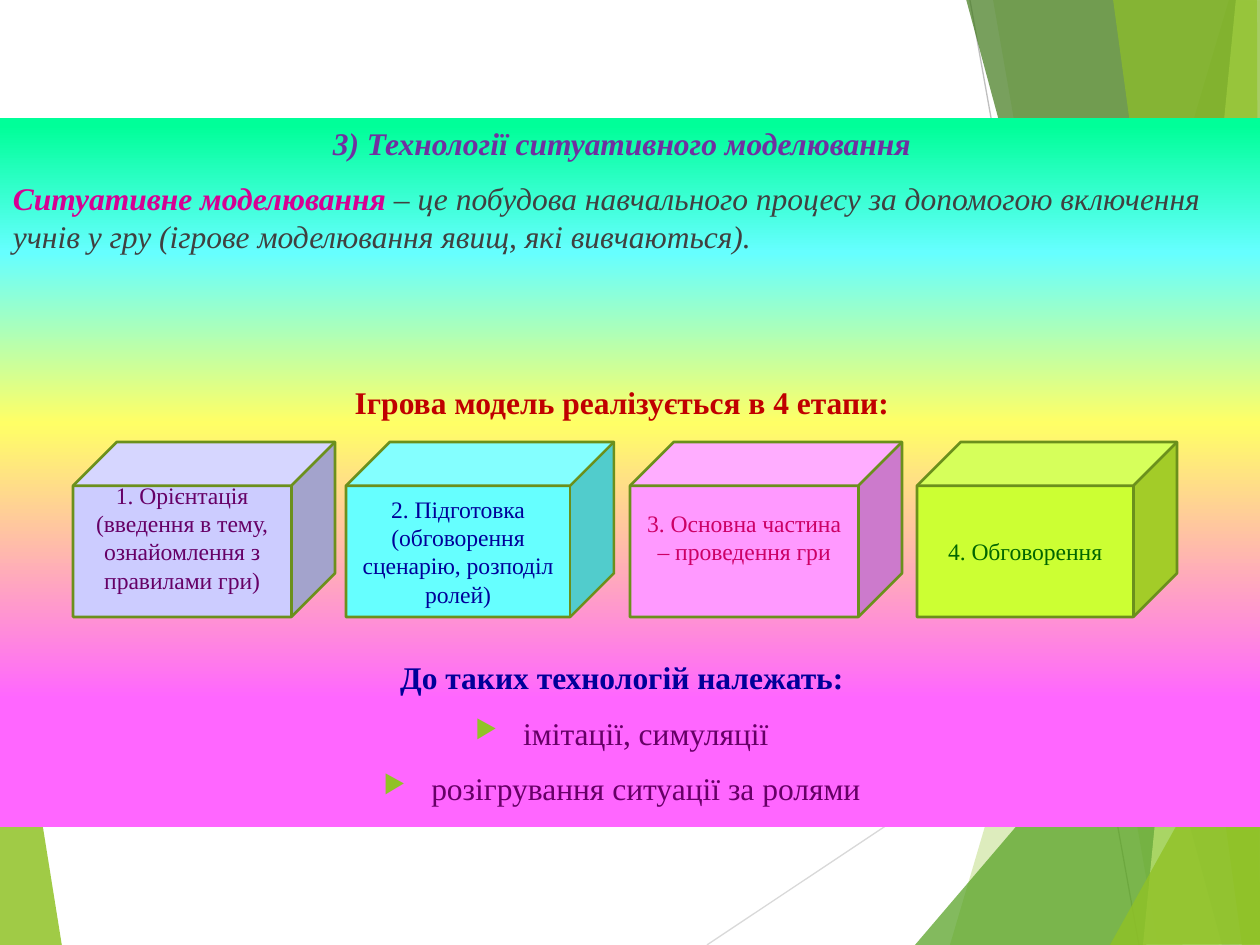
from lxml import etree
from pptx import Presentation
from pptx.dml.color import RGBColor
from pptx.enum.shapes import MSO_CONNECTOR, MSO_SHAPE
from pptx.enum.text import MSO_ANCHOR, PP_ALIGN
from pptx.oxml.ns import qn
from pptx.util import Pt

PX = 914400 // 126
FONT = "Times New Roman"
LINE = MSO_CONNECTOR.STRAIGHT
RECT, CUBE = MSO_SHAPE.RECTANGLE, MSO_SHAPE.CUBE
TOP, MIDDLE = MSO_ANCHOR.TOP, MSO_ANCHOR.MIDDLE
LEFT, CENTER = PP_ALIGN.LEFT, PP_ALIGN.CENTER

COLORS = {
    "lime": "90C226", "green": "54A021", "forest": "3F7819", "pale": "C0E474",
    "silver": "D9D9D9", "gray": "BFBFBF", "edge": "6B901C",
    "violet": "7030A0", "magenta": "D60093", "dark": "404040", "red": "C00000",
    "navy": "000099", "plum": "660066", "rose": "CC0066", "leaf": "006600",
    "lilac": "CCCCFF", "aqua": "66FFFF", "pink": "FF99FF", "neon": "CCFF33",
    "mint": "00FF99", "yellow": "FFFF66", "fuchsia": "FF66FF",
}

# Decor: colour, opacity in percent, corner points
FACETS_LEFT = [("lime", 85, [(-1, 553), (62, 946), (-1, 945)])]
FACETS_RIGHT = [
    ("lime", 30, [(1229, 0), (950, 945), (1262, 946), (1261, 1)]),
    ("lime", 20, [(993, -1), (1158, 945), (1261, 945), (1261, -1)]),
    ("green", 72, [(915, 945), (1260, 541), (1261, 945)]),
    ("forest", 70, [(966, -1), (1222, 945), (1261, 944), (1261, -1)]),
    ("pale", 70, [(1236, -1), (1143, 945), (1261, 945), (1260, -1)]),
    ("lime", 65, [(1113, -1), (1242, 945), (1260, 945), (1257, -1)]),
    ("lime", 80, [(1110, 945), (1261, 674), (1261, 944)]),
]
RAYS = [("silver", (707, 945), (1261, 576)), ("gray", (970, 0), (1139, 945))]

# Gradient from top to bottom: percent, colour
STOPS = [(1, "mint"), (19, "aqua"), (43, "yellow"), (82, "fuchsia")]

# Body: alignment, space before in points, bullet, runs (text, colour, bold, italic)
BODY = [
    (CENTER, 0, False,
     [("3) Технології ситуативного моделювання", "violet", True, True)]),
    (LEFT, 10, False,
     [("Ситуативне моделювання ", "magenta", True, True),
      ("– це побудова навчального процесу за допомогою включення учнів у гру "
       "(ігрове моделювання явищ, які вивчаються).", "dark", False, True)]),
    (CENTER, 73, False,
     [("Ігрова модель реалізується в 4 етапи:", "red", True, False)]),
    (CENTER, 136, False,
     [("До таких технологій належать:", "navy", True, False)]),
    (CENTER, 10, True, [("імітації, симуляції", "plum", False, False)]),
    (CENTER, 10, True, [("розігрування ситуації за ролями", "plum", False, False)]),
]

# Stages: left, width, fill, text colour, extra space below, text
STAGES = [
    (73, 262, "lilac", "plum", 28,
     "1. Орієнтація (введення в тему, ознайомлення з правилами гри)"),
    (346, 268, "aqua", "navy", 0,
     "2. Підготовка (обговорення сценарію, розподіл ролей)"),
    (630, 272, "pink", "rose", 28, "3. Основна частина – проведення гри"),
    (917, 260, "neon", "leaf", 0, "4. Обговорення"),
]


def rgb(name):
    return RGBColor.from_string(COLORS[name])


def paint(shape, name):
    shape.shadow.inherit = False
    shape.fill.solid()
    shape.fill.fore_color.rgb = rgb(name)


def facet(slide, name, alpha, points):
    pen = slide.shapes.build_freeform(*points[0], scale=PX)
    pen.add_line_segments(points[1:], close=True)
    shape = pen.convert_to_shape()
    paint(shape, name)
    shape.line.fill.background()
    color = shape.fill._xPr.find(".//" + qn("a:srgbClr"))
    etree.SubElement(color, qn("a:alpha"), val=str(alpha * 1000))


def ray(slide, name, start, end):
    line = slide.shapes.add_connector(LINE, *(v * PX for v in start + end))
    line.line.color.rgb = rgb(name)
    line.line.width = Pt(0.75)
    etree.SubElement(line._element.spPr, qn("a:effectLst"))


def box(slide, kind, left, top, width, height):
    return slide.shapes.add_shape(kind, *(v * PX for v in (left, top, width, height)))


def blend(shape):
    shape.shadow.inherit = False
    shape.fill.gradient()
    shape.fill.gradient_angle = 270
    stops = shape.fill._xPr.find(".//" + qn("a:gsLst"))
    for old in list(stops):
        stops.remove(old)
    for pos, name in STOPS:
        stop = etree.SubElement(stops, qn("a:gs"), pos=str(pos * 1000))
        etree.SubElement(stop, qn("a:srgbClr"), val=COLORS[name])


def frame(shape, anchor, right, bottom):
    text = shape.text_frame
    text.word_wrap = True
    text.vertical_anchor = anchor
    text.margin_left, text.margin_top = 13 * PX, 6 * PX
    text.margin_right, text.margin_bottom = right * PX, bottom * PX
    return text


def style(run, size, name, bold=False, italic=False):
    font = run.font
    font.name, font.size = FONT, Pt(size)
    font.bold, font.italic = bold, italic
    font.color.rgb = rgb(name)


def bullet(para):
    props = para._p.get_or_add_pPr()
    props.set("marL", str(48 * PX))
    props.set("indent", str(-48 * PX))
    color = etree.SubElement(props, qn("a:buClr"))
    etree.SubElement(color, qn("a:srgbClr"), val=COLORS["lime"])
    etree.SubElement(props, qn("a:buSzPct"), val="80000")
    etree.SubElement(props, qn("a:buChar"), char="▶")


def panel(slide):
    shape = box(slide, RECT, 0, 118, 1260, 709)
    blend(shape)
    shape.line.fill.background()
    text = frame(shape, TOP, 29, 6)
    for i, (align, gap, marked, runs) in enumerate(BODY):
        para = text.add_paragraph() if i else text.paragraphs[0]
        para.alignment = align
        para.space_before = Pt(gap)
        if marked:
            bullet(para)
        for words, *look in runs:
            run = para.add_run()
            run.text = words
            style(run, 18, *look)


def stage(slide, left, width, fill, ink, below, words):
    shape = box(slide, CUBE, left, 442, width, 175)
    paint(shape, fill)
    shape.line.color.rgb = rgb("edge")
    shape.line.width = Pt(1.5)
    text = frame(shape, MIDDLE, 13, 6 + below)
    text.text = words
    para = text.paragraphs[0]
    para.alignment = CENTER
    style(para.runs[0], 13.5, ink)


def main():
    deck = Presentation()
    deck.slide_width, deck.slide_height = 1260 * PX, 945 * PX
    slide = deck.slides.add_slide(deck.slide_layouts[6])
    # Background decor
    for item in FACETS_LEFT:
        facet(slide, *item)
    for item in RAYS:
        ray(slide, *item)
    for item in FACETS_RIGHT:
        facet(slide, *item)
    # Text panel and the four stages
    panel(slide)
    for item in STAGES:
        stage(slide, *item)
    deck.save("out.pptx")


if __name__ == "__main__":
    main()
